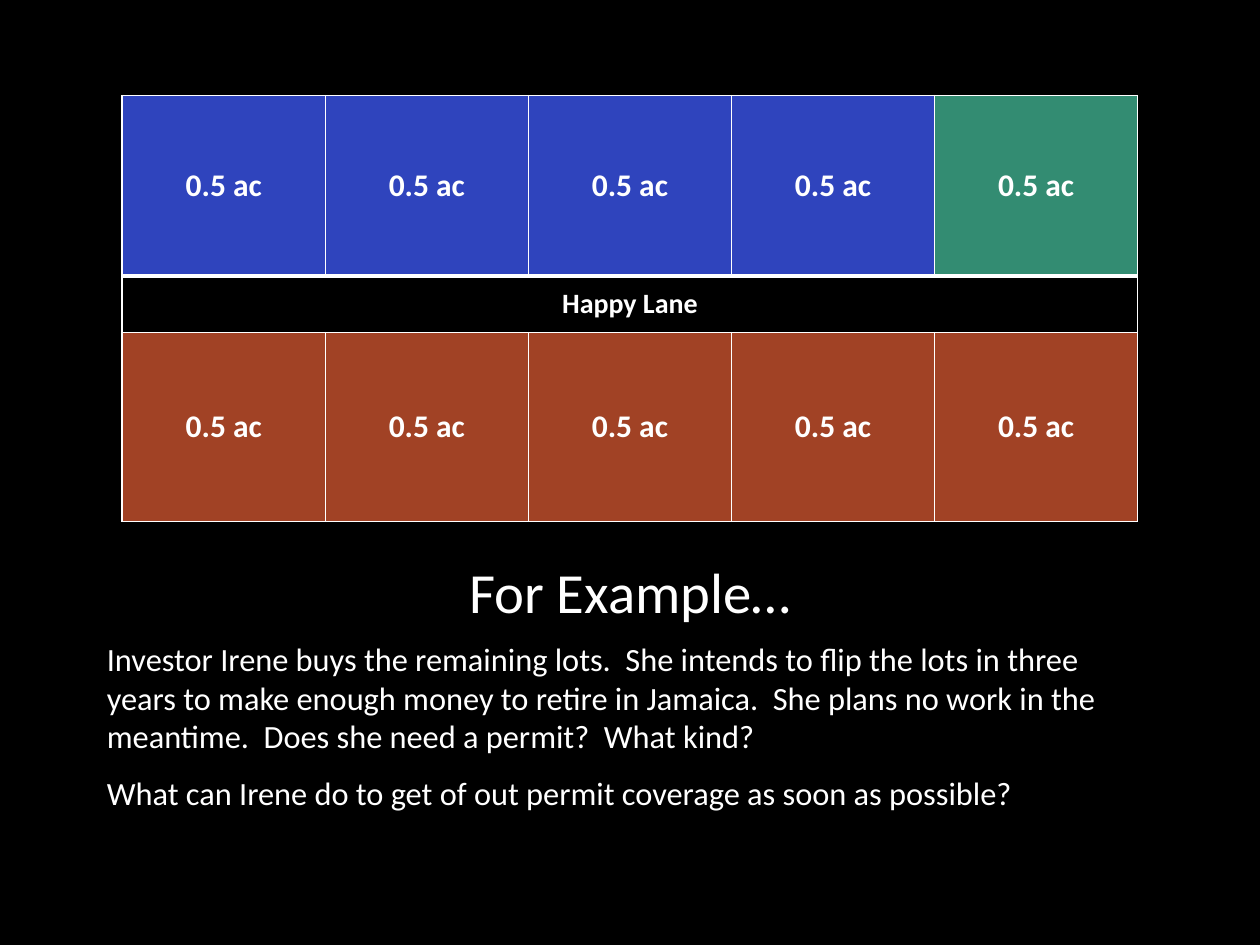
from dataclasses import dataclass

from lxml import etree
from pptx import Presentation
from pptx.dml.color import RGBColor
from pptx.enum import text
from pptx.oxml import ns
from pptx.util import Inches, Pt


@dataclass(frozen=True)
class Theme:
    """Colours, font and type sizes of the slide."""
    font: str = "Calibri"
    black: str = "000000"
    white: str = "FFFFFF"
    blue: str = "2F44BD"
    green: str = "338C72"
    rust: str = "A14225"
    title: float = 32.4
    body: float = 18.5
    lot: float = 18
    road: float = 16


THEME = Theme()
LOT = "0.5 ac"
LOTS_PER_ROW = 5
ROW_HEIGHTS = (1.43, 0.45, 1.5)
QUESTIONS = (
    "Investor Irene buys the remaining lots.  She intends to flip the lots in three years "
    "to make enough money to retire in Jamaica.  She plans no work in the meantime.  "
    "Does she need a permit?  What kind?",
    "What can Irene do to get of out permit coverage as soon as possible?",
)


def style_runs(para, size, bold=False):
    """Give every run of a paragraph the slide's white type."""
    for span in para.runs:
        span.font.name = THEME.font
        span.font.size = Pt(size)
        span.font.bold = bold
        span.font.color.rgb = RGBColor.from_string(THEME.white)


def add_border(cell, side, width):
    """Draw one white border of a cell, ahead of its fill."""
    properties = cell._tc.get_or_add_tcPr()
    line = etree.Element(ns.qn(f"a:ln{side}"), w=str(Pt(width)))
    fill = etree.SubElement(line, ns.qn("a:solidFill"))
    etree.SubElement(fill, ns.qn("a:srgbClr"), val=THEME.white)
    properties.insert("LRTB".index(side), line)


def fill_cell(cell, label, size, color, top=1, bottom=1):
    """Set the label, fill and borders of a cell."""
    cell.fill.solid()
    cell.fill.fore_color.rgb = RGBColor.from_string(color)
    cell.vertical_anchor = text.MSO_ANCHOR.MIDDLE
    cell.margin_left = cell.margin_right = Inches(0.13)
    cell.margin_top = cell.margin_bottom = 0
    cell.text_frame.text = label
    para = cell.text_frame.paragraphs[0]
    para.alignment = text.PP_ALIGN.CENTER
    style_runs(para, size, bold=True)
    for side, width in zip("LRTB", (1, 1, top, bottom)):
        add_border(cell, side, width)


def add_lot_map(page):
    """Add the two rows of lots on either side of the lane."""
    frame = page.shapes.add_table(len(ROW_HEIGHTS), LOTS_PER_ROW, Inches(0.97), Inches(0.76),
                                  Inches(8.06), Inches(sum(ROW_HEIGHTS)))
    lots = frame.table
    lots.first_row = lots.horz_banding = False
    for row, height in zip(lots.rows, ROW_HEIGHTS):
        row.height = Inches(height)
    for column in range(LOTS_PER_ROW):
        last = column == LOTS_PER_ROW - 1
        fill_cell(lots.cell(0, column), LOT, THEME.lot,
                  THEME.green if last else THEME.blue, bottom=3)
        fill_cell(lots.cell(1, column), "" if column else "Happy Lane", THEME.road,
                  THEME.black, top=3)
        fill_cell(lots.cell(2, column), LOT, THEME.lot, THEME.rust)
    lots.cell(1, 0).merge(lots.cell(1, LOTS_PER_ROW - 1))


def set_title(page, label):
    """Place and format the title placeholder."""
    box = page.shapes.title
    box.left, box.top, box.width, box.height = map(Inches, (0.75, 4.39, 8.5, 0.63))
    box.text_frame.text = label
    box.text_frame.vertical_anchor = text.MSO_ANCHOR.BOTTOM
    para = box.text_frame.paragraphs[0]
    para.alignment = text.PP_ALIGN.CENTER
    para.line_spacing = 0.9
    style_runs(para, THEME.title)


def add_body(page, paragraphs):
    """Add the paragraphs below the title."""
    box = page.shapes.add_textbox(Inches(0.75), Inches(5.02), Inches(8.5), Inches(1.59))
    frame = box.text_frame
    frame.word_wrap = True
    for index, wording in enumerate(paragraphs):
        para = frame.add_paragraph() if index else frame.paragraphs[0]
        para.text = wording
        para.space_before = Pt(10 if index else 0)
        style_runs(para, THEME.body)


def main():
    """Build and save the deck."""
    deck = Presentation()
    deck.slide_width, deck.slide_height = Inches(10), Inches(7.5)
    page = deck.slides.add_slide(deck.slide_layouts[5])
    page.background.fill.solid()
    page.background.fill.fore_color.rgb = RGBColor.from_string(THEME.black)
    set_title(page, "For Example…")
    add_lot_map(page)
    add_body(page, QUESTIONS)
    deck.save("out.pptx")


if __name__ == "__main__":
    main()
